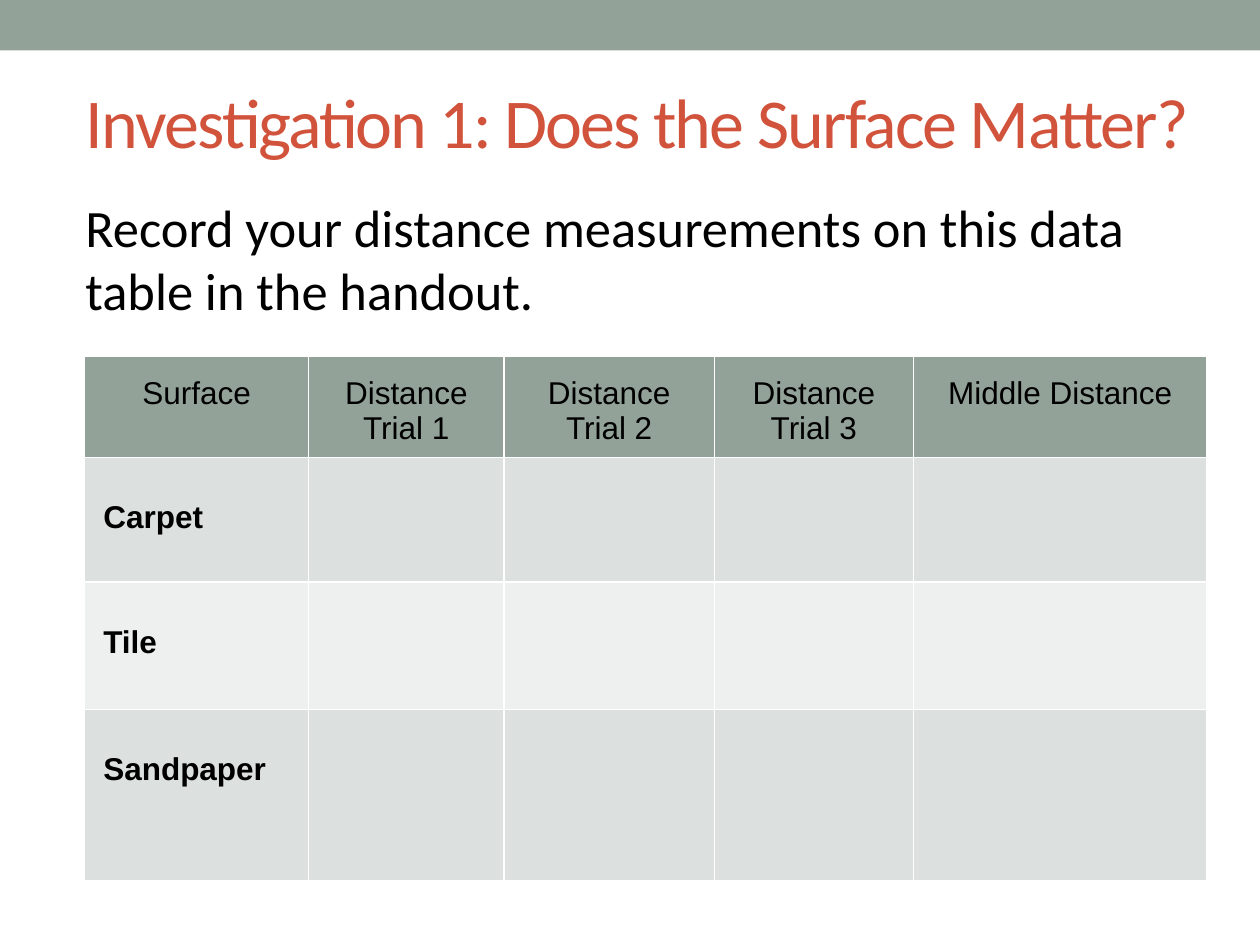
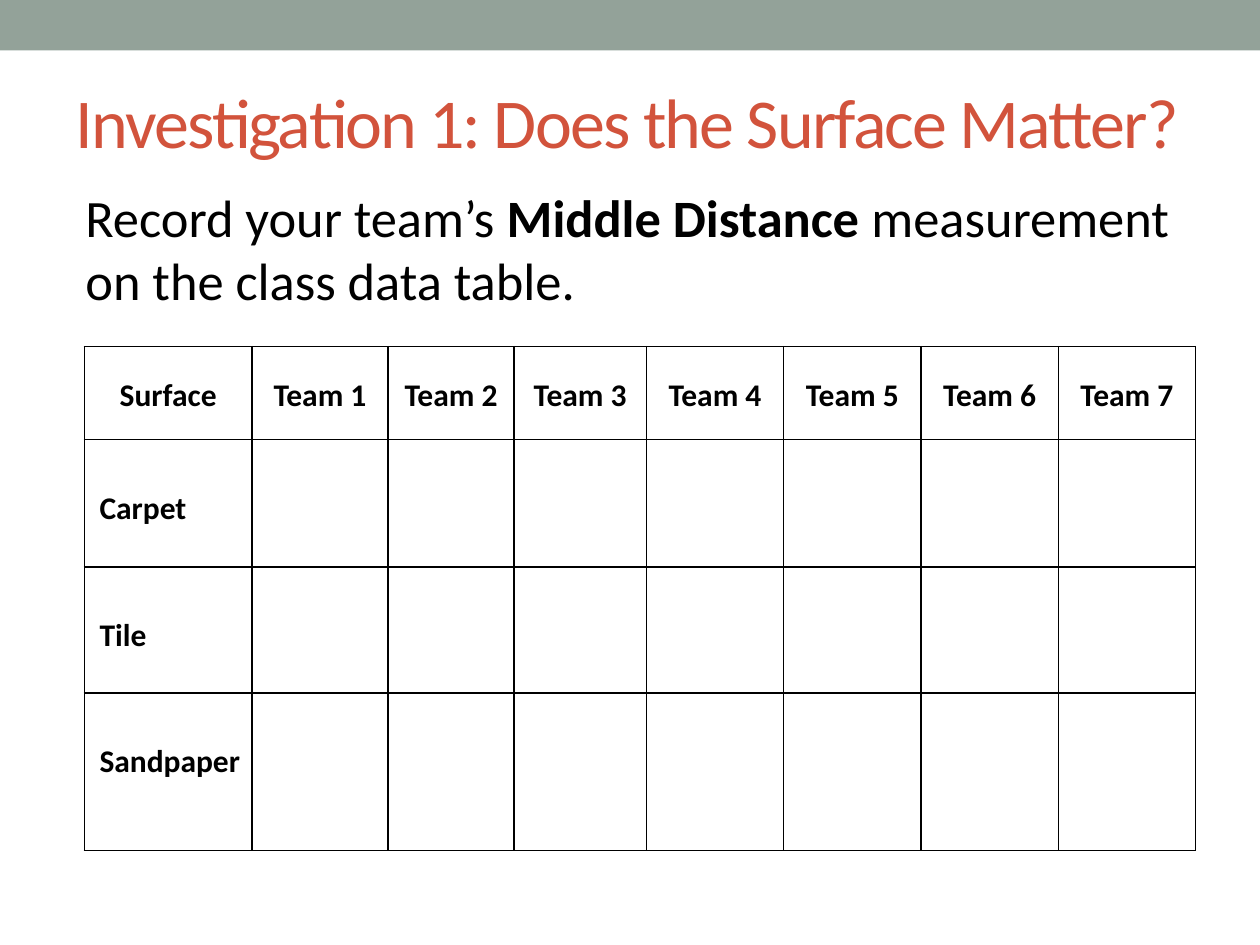
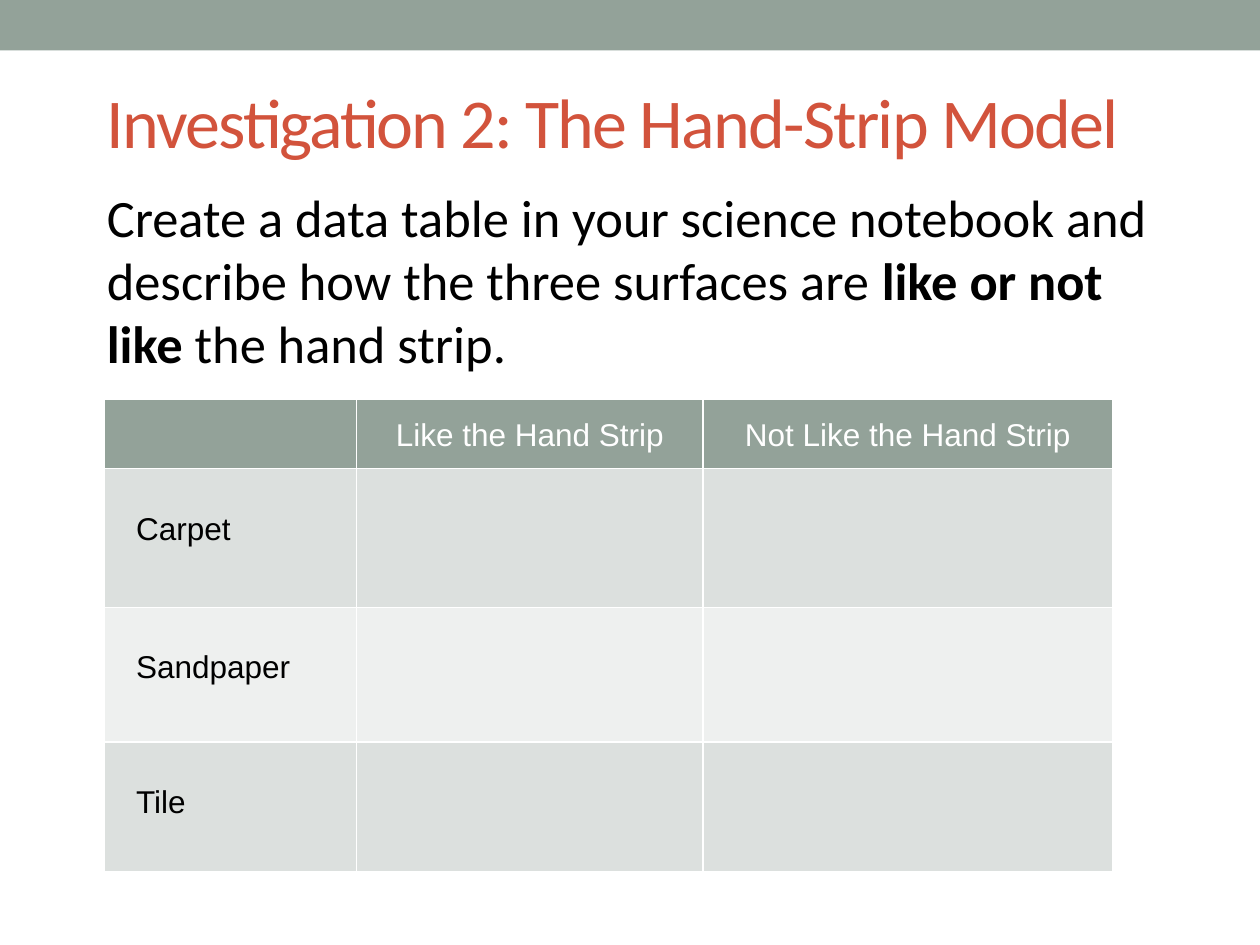
from dataclasses import dataclass

from lxml import etree
from pptx import Presentation
from pptx.dml.color import RGBColor
from pptx.enum.shapes import MSO_SHAPE as Shape
from pptx.enum.text import MSO_ANCHOR as Anchor, PP_ALIGN as Align
from pptx.oxml.ns import qn
from pptx.util import Pt

PX = 9144  # EMU per px, at 100 px to the inch


@dataclass(frozen=True)
class Theme:
    sage: str = "93A299"
    band_dark: str = "DCE0DE"
    band_light: str = "EEF0EF"
    rust: str = "D2533C"
    black: str = "000000"
    white: str = "FFFFFF"
    text_font: str = "Calibri"
    table_font: str = "Arial"
    title_size: int = 40
    body_size: int = 30
    table_size: int = 18


theme = Theme()


def add_run(paragraph, text, font, size, color, bold=False):
    run = paragraph.add_run()
    run.text = text
    run.font.name = font
    run.font.size = Pt(size)
    run.font.bold = bold
    run.font.color.rgb = RGBColor.from_string(color)
    return run


def add_borders(cell, color):
    """Draw a 1 pt line on all four sides; call before the cell is filled."""
    properties = cell._tc.get_or_add_tcPr()
    for side in ("lnL", "lnR", "lnT", "lnB"):
        line = etree.SubElement(properties, qn(f"a:{side}"), w=str(Pt(1)))
        fill = etree.SubElement(line, qn("a:solidFill"))
        etree.SubElement(fill, qn("a:srgbClr"), val=color)


banded_table = dict(
    font=theme.table_font, border=theme.white, filled=True, line_spacing=1.0,
    header_anchor=Anchor.TOP, header_top=15, label_top=34,
    side=10, vertical=5, header_bold=False,
)
outlined_table = dict(
    font=theme.text_font, border=theme.black, filled=False, line_spacing=1.15,
    header_anchor=Anchor.MIDDLE, header_top=0, label_top=35,
    side=7, vertical=0, header_bold=True,
)

# Boxes are left, top, width, height; bold body runs are marked True.
slides = [
    dict(
        title="Investigation 1: Does the Surface Matter?",
        title_box=(58, 42, 908, 108),
        body=[("Record your distance measurements on this data table in the handout.", False)],
        body_box=(58, 150, 883, 111),
        table=banded_table | dict(
            origin=(67, 283), columns=[178, 155, 167, 158, 233], rows=[74, 99, 101, 136],
            headers=["Surface", "Distance\nTrial 1", "Distance\nTrial 2",
                     "Distance\nTrial 3", "Middle Distance"],
            header_color=theme.black, labels=["Carpet", "Tile", "Sandpaper"],
            label_indent=5, label_bold=True),
    ),
    dict(
        title="Investigation 1: Does the Surface Matter?",
        title_box=(50, 42, 900, 108),
        body=[("Record your team’s ", False), ("Middle Distance", True),
              (" measurement on the class data table.", False)],
        body_box=(58, 142, 883, 111),
        table=outlined_table | dict(
            origin=(67, 275), columns=[133, 108, 100, 105] + [109] * 4,
            rows=[74, 101, 100, 125],
            headers=["Surface"] + [f"Team {number}" for number in range(1, 8)],
            header_color=theme.black, labels=["Carpet", "Tile", "Sandpaper"],
            label_indent=5, label_bold=True),
    ),
    dict(
        title="Investigation 2: The Hand-Strip Model",
        title_box=(75, 42, 875, 108),
        body=[("Create a data table in your science notebook and describe how the "
               "three surfaces are ", False),
              ("like or not like", True), (" the hand strip.", False)],
        body_box=(75, 142, 867, 162),
        table=banded_table | dict(
            origin=(83, 317), columns=[200, 275, 325], rows=[55, 110, 107, 103],
            headers=["", "Like the Hand Strip", "Not Like the Hand Strip"],
            header_color=theme.white, labels=["Carpet", "Sandpaper", "Tile"],
            label_indent=15, label_bold=False),
    ),
]

presentation = Presentation()
presentation.slide_width = 1000 * PX
presentation.slide_height = 750 * PX
blank_layout = presentation.slide_layouts[6]

for content in slides:
    slide = presentation.slides.add_slide(blank_layout)

    top_band = slide.shapes.add_shape(Shape.RECTANGLE, 0, 0, 1000 * PX, 40 * PX)
    top_band.shadow.inherit = False
    top_band.fill.solid()
    top_band.fill.fore_color.rgb = RGBColor.from_string(theme.sage)
    top_band.line.fill.background()

    title_frame = slide.shapes.add_textbox(*(n * PX for n in content["title_box"])).text_frame
    title_frame.word_wrap = True
    title_frame.vertical_anchor = Anchor.MIDDLE
    title_run = add_run(title_frame.paragraphs[0], content["title"],
                        theme.text_font, theme.title_size, theme.rust)
    title_run.font._element.set("spc", "-100")

    table_style = content["table"]
    columns, rows = table_style["columns"], table_style["rows"]
    left, top = table_style["origin"]
    table = slide.shapes.add_table(len(rows), len(columns), left * PX, top * PX,
                                   sum(columns) * PX, sum(rows) * PX).table
    table.first_row = table.horz_banding = False
    for column, width in zip(table.columns, columns):
        column.width = width * PX
    for row, height in zip(table.rows, rows):
        row.height = height * PX

    empty_cells = [""] * (len(columns) - 1)
    grid = [table_style["headers"]] + [[label] + empty_cells for label in table_style["labels"]]
    for row_index, texts in enumerate(grid):
        is_header = row_index == 0
        if is_header:
            fill_color = theme.sage
        else:
            fill_color = theme.band_dark if row_index % 2 else theme.band_light
        part = "header" if is_header else "label"
        indent = 0 if is_header else table_style["label_indent"]

        for column_index, text in enumerate(texts):
            cell = table.cell(row_index, column_index)
            add_borders(cell, table_style["border"])
            if table_style["filled"]:
                cell.fill.solid()
                cell.fill.fore_color.rgb = RGBColor.from_string(fill_color)
            else:
                cell.fill.background()
            if not text:
                continue

            cell.vertical_anchor = table_style["header_anchor"] if is_header else Anchor.TOP
            cell.margin_left = (table_style["side"] + indent) * PX
            cell.margin_right = table_style["side"] * PX
            cell.margin_top = table_style[f"{part}_top"] * PX
            cell.margin_bottom = table_style["vertical"] * PX
            for line_index, line in enumerate(text.split("\n")):
                frame = cell.text_frame
                paragraph = frame.add_paragraph() if line_index else frame.paragraphs[0]
                paragraph.alignment = Align.CENTER if is_header else Align.LEFT
                paragraph.line_spacing = table_style["line_spacing"]
                add_run(paragraph, line, table_style["font"], theme.table_size,
                        table_style["header_color"] if is_header else theme.black,
                        table_style[f"{part}_bold"])

    body_frame = slide.shapes.add_textbox(*(n * PX for n in content["body_box"])).text_frame
    body_frame.word_wrap = True
    for text, bold in content["body"]:
        add_run(body_frame.paragraphs[0], text, theme.text_font, theme.body_size,
                theme.black, bold)

presentation.save("out.pptx")
